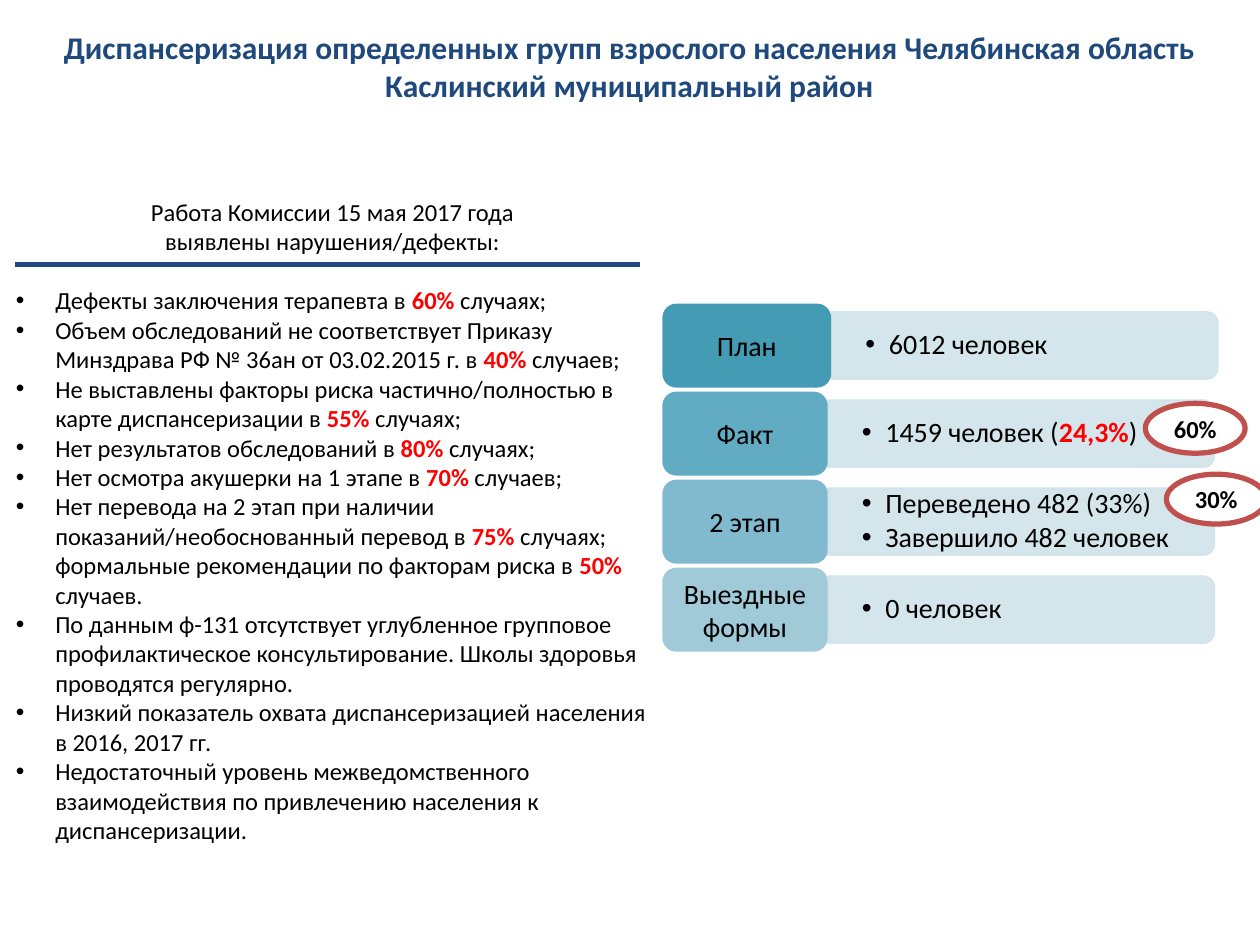
from dataclasses import dataclass

from lxml import etree
from pptx import Presentation
from pptx.dml.color import RGBColor
from pptx.enum.shapes import MSO_CONNECTOR, MSO_SHAPE
from pptx.enum.text import MSO_ANCHOR, PP_ALIGN
from pptx.oxml.ns import qn
from pptx.util import Pt

LEFT, CENTER = PP_ALIGN.LEFT, PP_ALIGN.CENTER
TOP, MIDDLE = MSO_ANCHOR.TOP, MSO_ANCHOR.MIDDLE
ROUNDED, BAR = MSO_SHAPE.ROUNDED_RECTANGLE, MSO_SHAPE.ROUND_2_SAME_RECTANGLE
OVAL, STRAIGHT = MSO_SHAPE.FLOWCHART_CONNECTOR, MSO_CONNECTOR.STRAIGHT


@dataclass(frozen=True)
class Theme:
    font: str = "Calibri"
    navy: str = "1F497D"
    black: str = "000000"
    white: str = "FFFFFF"
    red: str = "FF0000"
    ring: str = "C0504D"
    bar: str = "D0E3EA"
    tabs: tuple = ("449CB4", "61ACC2", "81BACE", "A1CAD9")
    title_size: int = 18
    row_size: int = 16
    body_size: int = 14


THEME = Theme()


def write(frame, paragraphs, size, color=THEME.black, bold=False, align=LEFT, anchor=TOP,
          indent=0, spacing=None, after=0, last_after=None, wrap=True, inset=(7.2, 3.6),
          append=False):
    """Fill a text frame; every second piece between asterisks is bold red."""
    frame.word_wrap = wrap
    frame.vertical_anchor = anchor
    frame.margin_left = frame.margin_right = Pt(inset[0])
    frame.margin_top = frame.margin_bottom = Pt(inset[1])
    for index, text in enumerate(paragraphs):
        para = frame.add_paragraph() if append or index else frame.paragraphs[0]
        para.alignment = align
        para.space_after = Pt(after)
        if spacing:
            para.line_spacing = spacing
        if indent:
            properties = para._p.get_or_add_pPr()
            properties.set("marL", str(Pt(indent)))
            properties.set("indent", str(Pt(-indent)))
            etree.SubElement(properties, qn("a:buFont")).set("typeface", "Arial")
            etree.SubElement(properties, qn("a:buChar")).set("char", "•")
        for position, piece in enumerate(text.split("*")):
            if piece:
                marked = position % 2 == 1
                span = para.add_run()
                span.text = piece
                span.font.name = THEME.font
                span.font.size = Pt(size)
                span.font.bold = bold or marked
                span.font.color.rgb = RGBColor.from_string(THEME.red if marked else color)
    if last_after is not None:
        para.space_after = Pt(last_after)


class SlideBuilder:
    def __init__(self, slide, theme):
        self.slide = slide
        self.theme = theme

    def text(self, left, top, width, height, paragraphs, size, **style):
        box = self.slide.shapes.add_textbox(Pt(left), Pt(top), Pt(width), Pt(height))
        write(box.text_frame, paragraphs, size, **style)
        return box

    def shape(self, kind, left, top, width, height, fill, line=None, weight=1, opacity=100):
        shape = self.slide.shapes.add_shape(kind, Pt(left), Pt(top), Pt(width), Pt(height))
        shape.shadow.inherit = False
        shape.fill.solid()
        shape.fill.fore_color.rgb = RGBColor.from_string(fill)
        if line:
            shape.line.color.rgb = RGBColor.from_string(line)
            shape.line.width = Pt(weight)
        else:
            shape.line.fill.background()
        if opacity < 100:
            for color in shape._element.spPr.iter(qn("a:srgbClr")):
                etree.SubElement(color, qn("a:alpha")).set("val", str(opacity * 1000))
        return shape

    def rule(self, left, right, y, color, weight):
        line = self.slide.shapes.add_connector(STRAIGHT, Pt(left), Pt(y), Pt(right), Pt(y))
        line.line.color.rgb = RGBColor.from_string(color)
        line.line.width = Pt(weight)
        etree.SubElement(line._element.spPr, qn("a:effectLst"))

    def row(self, top, tab_width, tab_color, label, items):
        left, tab_height, length, thickness = 378.5, 48, 221, 38.5
        bar_left, middle = left + tab_width, top + tab_height / 2
        # The bar stands upright and is turned so its round corners face right
        bar = self.shape(BAR, bar_left + (length - thickness) / 2, middle - length / 2,
                         thickness, length, self.theme.bar, self.theme.bar, 0.75, opacity=90)
        bar.rotation = 90
        self.text(bar_left, middle - 17.5, length, 35, items, self.theme.row_size,
                  anchor=MIDDLE, indent=13.5, spacing=0.9, after=2.4, inset=(19.5, 0))
        tab = self.shape(ROUNDED, left, top, tab_width, tab_height, tab_color)
        write(tab.text_frame, label, self.theme.row_size, align=CENTER, anchor=MIDDLE)

    def badge(self, left, top, label):
        oval = self.shape(OVAL, left, top, 57, 28.5, self.theme.white, self.theme.ring, 3)
        write(oval.text_frame, [label], self.theme.body_size, bold=True, align=CENTER,
              anchor=MIDDLE, wrap=False)


TITLE = ["Диспансеризация определенных групп взрослого населения Челябинская область",
         "Каслинский муниципальный район"]
HEADING = ["Работа Комиссии 15 мая 2017 года", "выявлены нарушения/дефекты:"]
DEFECTS = [
    "Дефекты заключения терапевта в *60%* случаях;",
    "Объем обследований не соответствует Приказу Минздрава РФ № 36ан от 03.02.2015 г. "
    "в *40% *случаев;",
    "Не выставлены факторы риска частично/полностью в карте диспансеризации в *55%* случаях;",
    "Нет результатов обследований в *80%* случаях;",
    "Нет осмотра акушерки на 1 этапе в *70%* случаев;",
    "Нет перевода на 2 этап при наличии показаний/необоснованный перевод в *75%* случаях; "
    "формальные рекомендации по факторам риска в *50% *случаев.",
    "По данным ф-131 отсутствует углубленное групповое профилактическое консультирование. "
    "Школы здоровья проводятся регулярно.",
    "Низкий показатель охвата диспансеризацией населения в 2016, 2017 гг.",
    "Недостаточный уровень межведомственного взаимодействия по привлечению населения "
    "к диспансеризации.",
]
ROWS = [
    (96.5, ["План"], ["6012 человек"]),
    (94.5, ["Факт"], ["1459 человек (*24,3%*)"]),
    (94.5, ["2 этап"], ["Переведено 482 (33%)", "Завершило 482 человек"]),
    (94.5, ["Выездные", "формы"], ["0 человек"]),
]


def main():
    deck = Presentation()
    deck.slide_width, deck.slide_height = Pt(720), Pt(540)
    page = SlideBuilder(deck.slides.add_slide(deck.slide_layouts[6]), THEME)

    # Title
    page.text(-0.5, 12.5, 720.5, 51, TITLE, THEME.title_size, color=THEME.navy,
              bold=True, align=CENTER)

    # Plan and results
    first_top, pitch = 173.5, 50.3
    for index, (tab_width, label, items) in enumerate(ROWS):
        page.row(first_top + index * pitch, tab_width, THEME.tabs[index], label, items)

    # Commission findings
    findings = page.text(2, 109, 376, 380, HEADING, THEME.body_size, align=CENTER,
                         last_after=17)
    write(findings.text_frame, DEFECTS, THEME.body_size, indent=22.5, append=True)
    page.rule(8.5, 366, 151, THEME.navy, 3)

    # Percentage badges
    page.badge(654.5, 230.5, "60%")
    page.badge(666.5, 271, "30%")

    deck.save("out.pptx")


if __name__ == "__main__":
    main()
